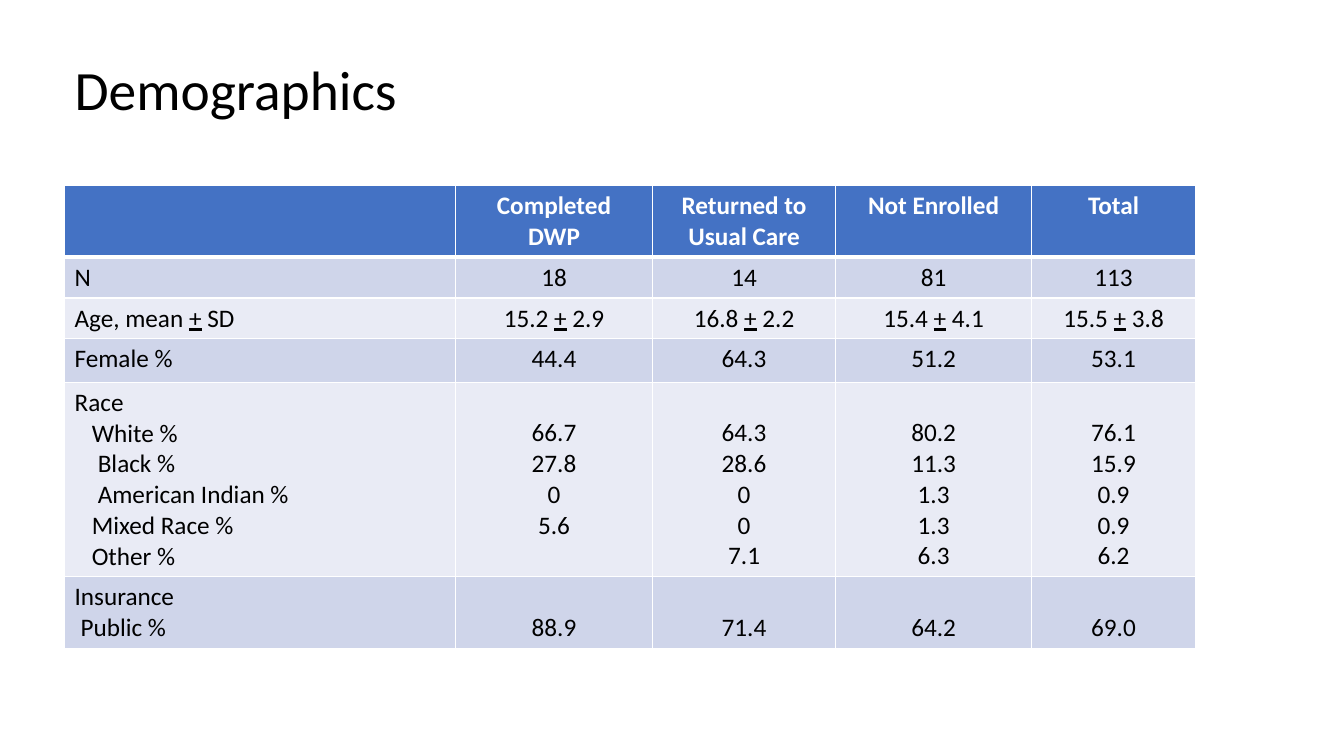
import dataclasses

import lxml.etree
import pptx
import pptx.dml.color
import pptx.enum.text
import pptx.oxml.ns
import pptx.util

Inches = pptx.util.Inches
Pt = pptx.util.Pt
Align = pptx.enum.text.PP_ALIGN
Anchor = pptx.enum.text.MSO_ANCHOR

FONT = "Calibri"
BLACK, WHITE = "000000", "FFFFFF"
HEADER_BLUE = "4472C4"
BANDS = ("CFD5EA", "E9EBF5")
BODY_SIZE = 18
LINE_HEIGHT = 0.305
CELL_MARGIN = 0.05
COLUMN_WIDTHS = (3.88, 1.95, 1.82, 1.94, 1.63)
GROUPS = ("", "Completed\nDWP", "Returned to Usual Care", "Not Enrolled", "Total")


@dataclasses.dataclass(frozen=True)
class Measure:
    """One table row: a heading, indented sub-labels, and a value list per group."""
    heading: str
    height: float
    values: tuple[str, ...]
    sublabels: tuple[tuple[str, float], ...] = ()


MEASURES = (
    Measure("N", 0.4, ("18", "14", "81", "113")),
    Measure("Age, mean + SD", 0.4,
            ("15.2 + 2.9", "16.8 + 2.2", "15.4 + 4.1", "15.5 + 3.8")),
    Measure("Female %", 0.43, ("44.4", "64.3", "51.2", "53.1")),
    Measure("Race", 1.93,
            ("66.7\n27.8\n0\n5.6", "64.3\n28.6\n0\n0\n7.1",
             "80.2\n11.3\n1.3\n1.3\n6.3", "76.1\n15.9\n0.9\n0.9\n6.2"),
            (("White %", 0.17), ("Black %", 0.23), ("American Indian %", 0.23),
             ("Mixed Race %", 0.17), ("Other %", 0.17))),
    Measure("Insurance", 0.71, ("88.9", "71.4", "64.2", "69.0"),
            (("Public %", 0.06),)),
)


def rgb(value: str) -> pptx.dml.color.RGBColor:
    return pptx.dml.color.RGBColor.from_string(value)


def write(paragraph, text: str, *, size: float = BODY_SIZE, color: str = BLACK,
          bold: bool = False, align=Align.LEFT, indent: float = 0) -> None:
    """Fill a paragraph, underlining each plus sign to read as plus-or-minus."""
    paragraph.alignment = align
    if indent:
        paragraph._p.get_or_add_pPr().set("marL", str(Inches(indent)))
    for position, part in enumerate(text.split("+")):
        pieces = [("+", True)] if position else []
        for piece, underlined in pieces + [(part, False)]:
            run = paragraph.add_run()
            run.text = piece
            run.font.name = FONT
            run.font.size = Pt(size)
            run.font.bold = bold
            run.font.underline = underlined
            run.font.color.rgb = rgb(color)


def write_lines(cell, text: str, **style) -> None:
    frame = cell.text_frame
    for index, line in enumerate(text.split("\n")):
        write(frame.add_paragraph() if index else frame.paragraphs[0], line, **style)


def style_cell(cell, fill: str, top: float = 1, bottom: float = 1) -> None:
    """Set the fill and the white borders, whose widths are in points."""
    properties = cell._tc.get_or_add_tcPr()
    qn = pptx.oxml.ns.qn
    for side, width in (("L", 1), ("R", 1), ("T", top), ("B", bottom)):
        line = lxml.etree.SubElement(properties, qn(f"a:ln{side}"), w=str(Pt(width)))
        solid = lxml.etree.SubElement(line, qn("a:solidFill"))
        lxml.etree.SubElement(solid, qn("a:srgbClr"), val=WHITE)
    cell.fill.solid()
    cell.fill.fore_color.rgb = rgb(fill)
    cell.margin_top = cell.margin_bottom = Inches(CELL_MARGIN)


def add_title(slide, text: str) -> None:
    title = slide.shapes.title
    title.left, title.top = Inches(0.64), Inches(0.63)
    title.width, title.height = Inches(11.5), Inches(0.58)
    title.text_frame.vertical_anchor = Anchor.MIDDLE
    heading = title.text_frame.paragraphs[0]
    heading.line_spacing = 0.9
    write(heading, text, size=39.6)


def add_measure(table, row: int, measure: Measure) -> None:
    for column in range(len(GROUPS)):
        style_cell(table.cell(row, column), BANDS[(row - 1) % 2],
                   top=3 if row == 1 else 1)
    label = table.cell(row, 0)
    write_lines(label, measure.heading)
    for sublabel, indent in measure.sublabels:
        write(label.text_frame.add_paragraph(), sublabel, indent=indent)
    for column, values in enumerate(measure.values, start=1):
        cell = table.cell(row, column)
        write_lines(cell, values, align=Align.CENTER)
        if measure.sublabels:
            cell.margin_top = Inches(CELL_MARGIN + LINE_HEIGHT)


def add_demographics(slide) -> None:
    heights = [0.71] + [measure.height for measure in MEASURES]
    table = slide.shapes.add_table(
        len(heights), len(GROUPS), Inches(0.64), Inches(1.84),
        Inches(sum(COLUMN_WIDTHS)), Inches(sum(heights))).table
    for column, width in zip(table.columns, COLUMN_WIDTHS):
        column.width = Inches(width)
    for row, height in zip(table.rows, heights):
        row.height = Inches(height)
    for column, group in enumerate(GROUPS):
        cell = table.cell(0, column)
        style_cell(cell, HEADER_BLUE, bottom=3)
        if group:
            write_lines(cell, group, color=WHITE, bold=True, align=Align.CENTER)
    for row, measure in enumerate(MEASURES, start=1):
        add_measure(table, row, measure)


def main() -> None:
    deck = pptx.Presentation()
    deck.slide_width, deck.slide_height = Inches(13.33), Inches(7.5)
    slide = deck.slides.add_slide(deck.slide_layouts.get_by_name("Title Only"))
    add_title(slide, "Demographics")
    add_demographics(slide)
    deck.save("out.pptx")


if __name__ == "__main__":
    main()
